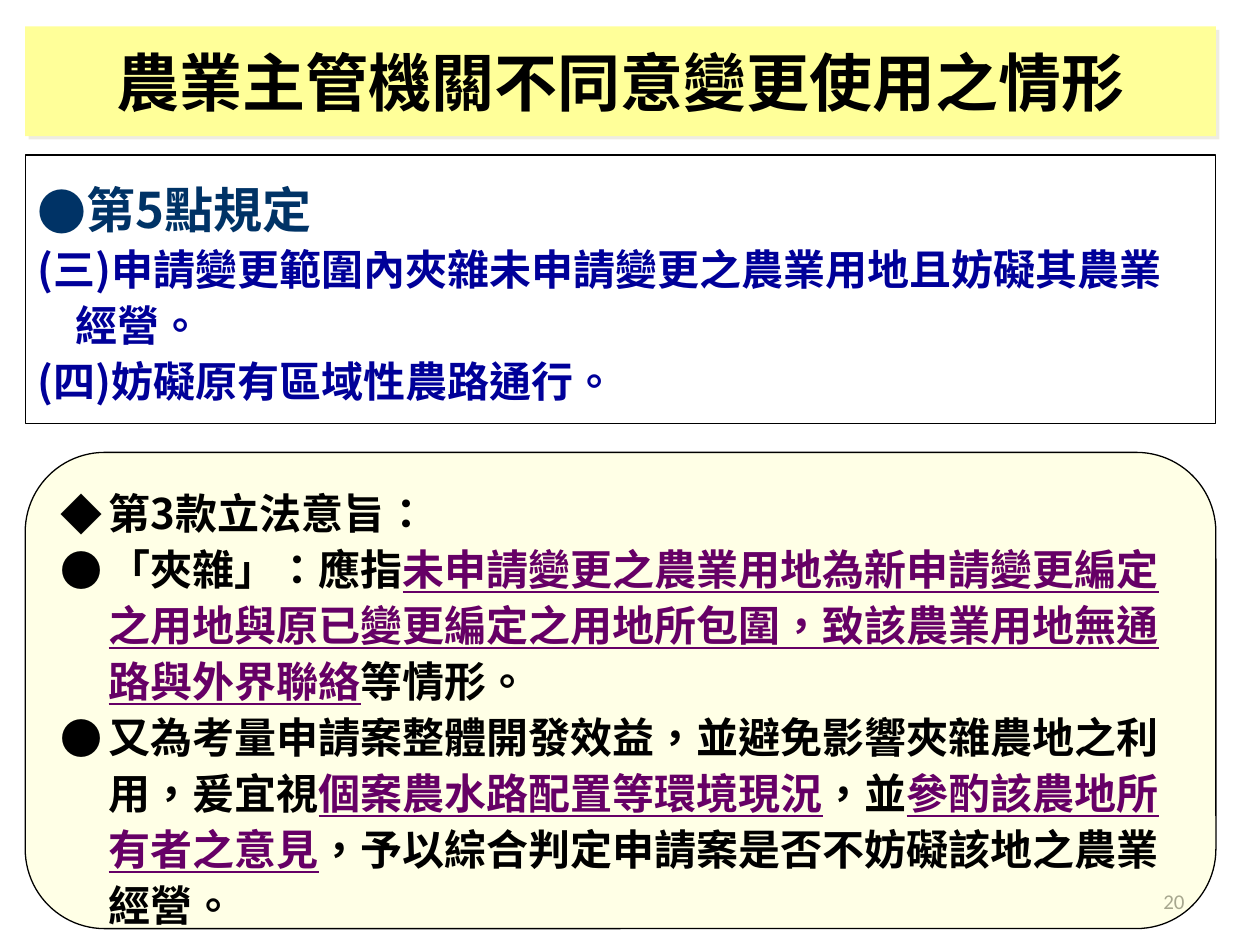
from lxml.etree import SubElement
from pptx import Presentation
from pptx.dml.color import RGBColor as RGB
from pptx.enum.shapes import MSO_SHAPE as SHAPE
from pptx.enum.text import MSO_ANCHOR as ANCHOR, MSO_AUTO_SIZE as AUTO, PP_ALIGN as ALIGN
from pptx.oxml.ns import qn
from pptx.util import Inches, Pt

CJK = "Noto Sans CJK SC"
TIMES = "Times New Roman"
LEFT, WIDTH = Inches(0.2), Inches(9.45)
PURPLE = "660066"


def write(p, text, size=24, font=TIMES, color="000000", bold=True, underline=False):
    r = p.add_run()
    r.text = text
    f = r.font
    f.size, f.name, f.bold, f.underline = Pt(size), font, bold, underline
    f.color.rgb = RGB.from_string(color)
    rPr = r._r.get_or_add_rPr()
    rPr.set("lang", "zh-TW")
    SubElement(rPr, qn("a:ea"), typeface=CJK)


def layout(p, spacing, before=0, margin=0, indent=0, bullet=None):
    p.alignment = ALIGN.LEFT
    p.line_spacing, p.space_before, p.space_after = Pt(spacing), Pt(before), Pt(0)
    pPr = p._p.get_or_add_pPr()
    pPr.set("marL", str(Inches(margin)))
    pPr.set("indent", str(Inches(indent)))
    if bullet:
        SubElement(pPr, qn("a:buFont"), typeface=CJK)
        SubElement(pPr, qn("a:buChar"), char=bullet)
    else:
        SubElement(pPr, qn("a:buNone"))


prs = Presentation()
prs.slide_width, prs.slide_height = Inches(10), Inches(7.5)
s = prs.slides.add_slide(prs.slide_layouts[1])
title, body = s.shapes.title, s.placeholders[1]

body.left, body.top, body.width, body.height = LEFT, Inches(1.23), WIDTH, Inches(2.13)
body.line.color.rgb = RGB.from_string("000000")
body.line.width = Pt(0.75)
tf = body.text_frame
tf.auto_size, tf.vertical_anchor = AUTO.NONE, ANCHOR.TOP
p = tf.paragraphs[0]
layout(p, 44, before=6, margin=0.38, indent=-0.38, bullet="●")
write(p, "第5點規定", size=28, font=CJK, color="003366")
for text, margin in [
    ("(三)申請變更範圍內夾雜未申請變更之農業用地且妨礙其農業", 0),
    ("經營。", 0.3),
    ("(四)妨礙原有區域性農路通行。", 0),
]:
    p = tf.add_paragraph()
    layout(p, 29, before=3, margin=margin)
    write(p, text, font=CJK, color="000099")

number = s.shapes.add_textbox(Inches(7.17), Inches(6.95), Inches(2.33), Inches(0.4))
tf = number.text_frame
tf.word_wrap, tf.vertical_anchor = True, ANCHOR.MIDDLE
p = tf.paragraphs[0]
p.alignment = ALIGN.RIGHT
write(p, "20", size=12, font="Calibri", color="8C8C8C", bold=False)

title.left, title.top, title.width, title.height = LEFT, Inches(0.21), WIDTH, Inches(0.87)
title.fill.solid()
title.fill.fore_color.rgb = RGB.from_string("FFFF99")
effects = SubElement(title._element.spPr, qn("a:effectLst"))
shadow = SubElement(effects, qn("a:outerShdw"), dist=str(Pt(2.8)), dir=str(45 * 60000), algn="ctr")
SubElement(shadow, qn("a:srgbClr"), val="EEECE1")
tf = title.text_frame
tf.auto_size, tf.vertical_anchor = AUTO.NONE, ANCHOR.MIDDLE
p = tf.paragraphs[0]
p.alignment = ALIGN.CENTER
write(p, "農業主管機關不同意變更使用之情形", size=36)

panel = s.shapes.add_shape(SHAPE.ROUNDED_RECTANGLE, LEFT, Inches(3.59), WIDTH, Inches(3.78))
panel.adjustments[0] = 0.167
panel.shadow.inherit = False
panel.fill.solid()
panel.fill.fore_color.rgb = RGB.from_string("FFFF99")
color = panel._element.spPr.find(qn("a:solidFill")).find(qn("a:srgbClr"))
SubElement(color, qn("a:alpha"), val="24000")
panel.line.color.rgb = RGB.from_string("000000")
panel.line.width = Pt(0.75)
tf = panel.text_frame
tf.word_wrap, tf.vertical_anchor = True, ANCHOR.TOP
mark = dict(color=PURPLE, underline=True)
notes = [
    ("◆", [("第3款立", dict(font=CJK)), ("法意旨：", {})]),
    ("●", [
        ("「", dict(font="Noto Sans CJK JP")),
        ("夾雜」：應指", {}),
        ("未申請變更之農業用地為新申請變更編定之用地與原已變更編定之用地所包圍，致該農業用地無通路與外界聯絡", mark),
        ("等情形。", {}),
    ]),
    ("●", [
        ("又為考量申請案整體開發效益，並避免影響夾雜農地之利用，爰宜視", {}),
        ("個案農水路配置等環境現況", mark),
        ("，並", {}),
        ("參酌該農地所有者之意見", mark),
        ("，予以綜合判定申請案是否不妨礙該地之農業經營。", {}),
    ]),
]
for i, (bullet, runs) in enumerate(notes):
    p = tf.add_paragraph() if i else tf.paragraphs[0]
    layout(p, 32, margin=0.38, indent=-0.38, bullet=bullet)
    for text, style in runs:
        write(p, text, **style)

prs.save("out.pptx")
